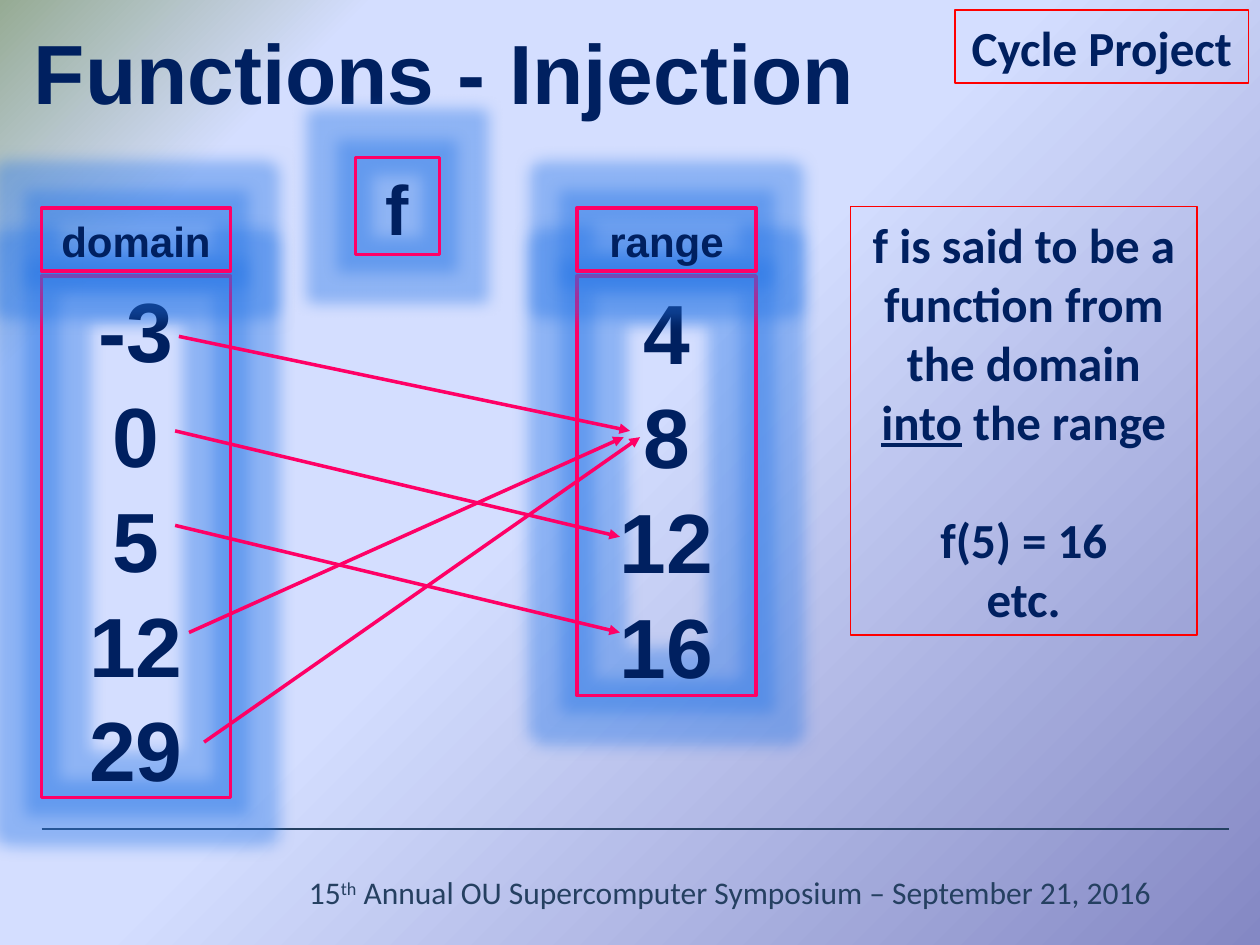
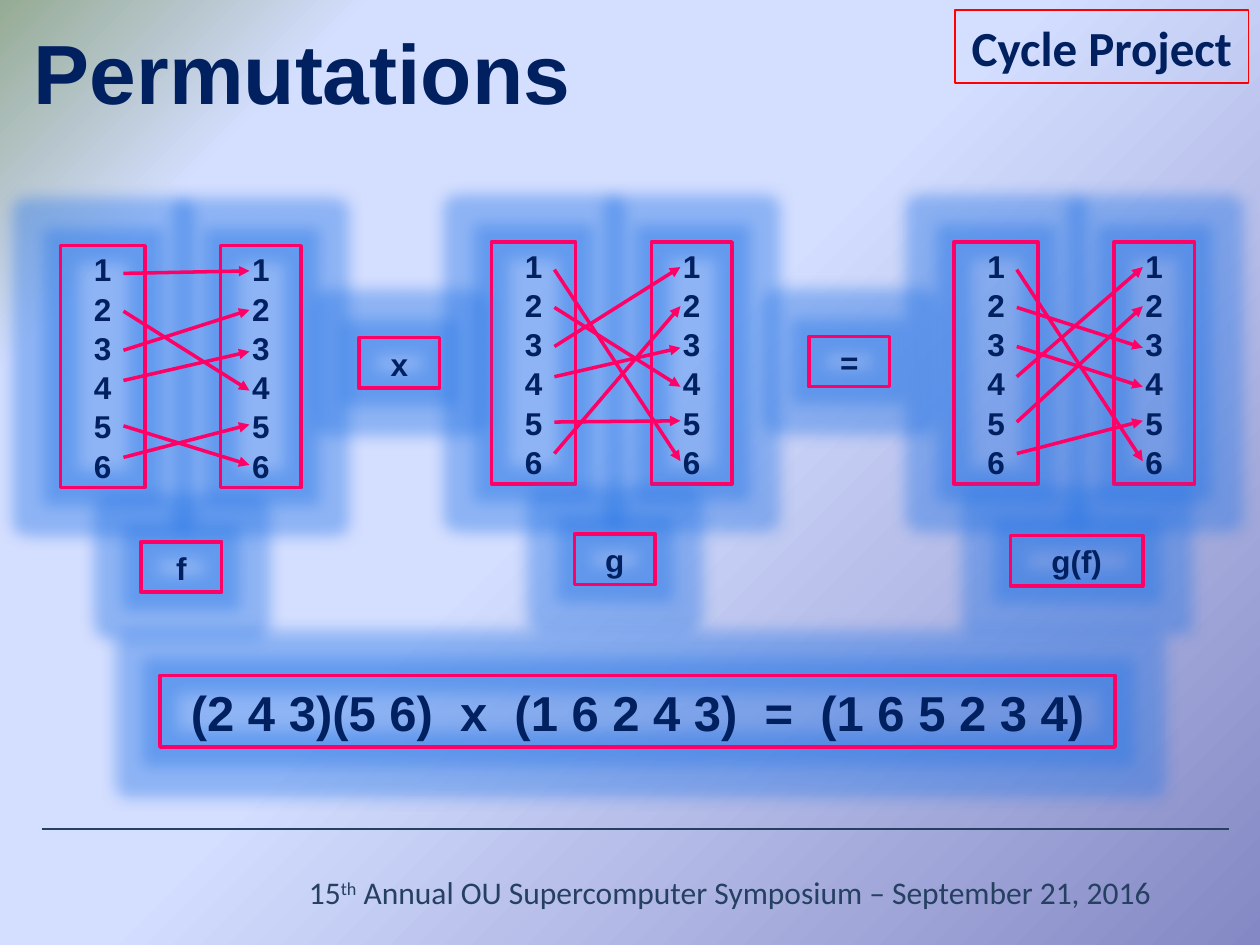
"""Build two slides on functions and permutations with mapping diagrams."""
from lxml.etree import SubElement
from pptx import Presentation
from pptx.dml.color import RGBColor
from pptx.enum.shapes import MSO_CONNECTOR, MSO_SHAPE
from pptx.enum.text import MSO_ANCHOR, PP_ALIGN
from pptx.oxml import parse_xml
from pptx.oxml.ns import nsdecls, qn
from pptx.util import Inches, Pt

NAVY = RGBColor(0x00, 0x20, 0x60)
SLATE = RGBColor(0x25, 0x40, 0x61)
PINK = RGBColor(0xFF, 0x00, 0x66)
RED = RGBColor(0xFF, 0x00, 0x00)
GLOW = RGBColor(0x25, 0x75, 0xE6)
BACKGROUND = [(0, "8488C4"), (53, "D4DEFF"), (83, "D4DEFF"), (100, "96AB94")]

PROJECT = "Cycle Project"
FOOTER = [("15", False), ("th", True),
          (" Annual OU Supercomputer Symposium – September 21, 2016", False)]

INJECTION_BOXES = [
    (["-3", "0", "5", "12", "29"], (0.33, 2.19, 1.5, 4.14), 48),
    (["4", "8", "12", "16"], (4.58, 2.19, 1.42, 3.33), 48),
    (["domain"], (0.33, 1.65, 1.5, 0.5), 24),
    (["range"], (4.58, 1.65, 1.42, 0.5), 24),
    (["f"], (2.82, 1.25, 0.67, 0.77), 40),
]
INJECTION_ARROWS = [
    (1.42, 2.67, 5, 3.42), (1.39, 3.42, 4.92, 4.26), (1.39, 4.17, 4.92, 5.02),
    (1.5, 5.02, 4.95, 3.47), (1.62, 5.89, 5.08, 3.47),
]
NOTE_LINES = [
    [("f is said to be a function from the domain ", False), ("into", True),
     (" the range", False)],
    [("f(5) = 16", False)],
    [("etc.", False)],
]

PERMUTATIONS = [
    (0.48, 1.95, [1, 4, 2, 3, 6, 5]),
    (3.9, 1.92, [6, 4, 1, 3, 5, 2]),
    (7.57, 1.92, [6, 3, 4, 1, 2, 5]),
]
ROW_STARTS = [0.22, 0.52, 0.83, 1.07, 1.43, 1.68]
ROW_ENDS = [0.2, 0.51, 0.84, 1.15, 1.42, 1.74]
PERMUTATION_LABELS = [
    (["f"], (1.12, 4.3, 0.64, 0.4), 18),
    (["g"], (4.56, 4.24, 0.64, 0.4), 18),
    (["x"], (2.85, 2.68, 0.64, 0.4), 18),
    (["="], (6.42, 2.67, 0.64, 0.4), 18),
    (["g(f)"], (8.02, 4.25, 1.05, 0.4), 18),
    (["(2 4 3)(5 6)  x  (1 6 2 4 3)  =  (1 6 5 2 3 4)"],
     (1.27, 5.36, 7.58, 0.57), 28),
]


def style(p, size, name, color=NAVY, bold=True, align=PP_ALIGN.CENTER):
    p.alignment = align
    p.font.size, p.font.name, p.font.bold = Pt(size), name, bold
    p.font.color.rgb = color


def add_frame(slide, at, color, width):
    sp = slide.shapes.add_shape(MSO_SHAPE.RECTANGLE, *map(Inches, at))
    sp.shadow.inherit = False
    sp.fill.background()
    sp.line.color.rgb = color
    sp.line.width = Pt(width)
    sp.text_frame.word_wrap = True
    sp.text_frame.vertical_anchor = MSO_ANCHOR.MIDDLE
    return sp


def add_glow_box(slide, lines, at, size):
    sp = add_frame(slide, at, PINK, 2)
    effects = sp._element.spPr.find(qn("a:effectLst"))
    glow = SubElement(effects, qn("a:glow"), rad=str(Pt(18)))
    tint = SubElement(glow, qn("a:srgbClr"), val=str(GLOW))
    SubElement(tint, qn("a:alpha"), val="40000")
    tf = sp.text_frame
    for i, line in enumerate(lines):
        p = tf.add_paragraph() if i else tf.paragraphs[0]
        p.text = line
        p.line_spacing = 1.04
        style(p, size, "Arial")


def add_line(slide, ends, color, width, arrow=False):
    line = slide.shapes.add_connector(MSO_CONNECTOR.STRAIGHT, *map(Inches, ends))
    line.line.color.rgb = color
    line.line.width = Pt(width)
    if arrow:
        SubElement(line.line._get_or_add_ln(), qn("a:tailEnd"), type="triangle")
    SubElement(line._element.spPr, qn("a:effectLst"))


def add_text(slide, at):
    tf = slide.shapes.add_textbox(*map(Inches, at)).text_frame
    tf.word_wrap = True
    return tf.paragraphs[0]


def set_background(slide):
    stops = "".join(f'<a:gs pos="{pos * 1000}"><a:srgbClr val="{color}"/></a:gs>'
                    for pos, color in BACKGROUND)
    slide._element.cSld.insert(0, parse_xml(
        f'<p:bg {nsdecls("p", "a")}><p:bgPr><a:gradFill rotWithShape="1">'
        f'<a:gsLst>{stops}</a:gsLst><a:path path="circle">'
        '<a:fillToRect l="100000" t="100000"/></a:path></a:gradFill>'
        '<a:effectLst/></p:bgPr></p:bg>'))


def add_slide(prs, title):
    slide = prs.slides.add_slide(prs.slide_layouts[6])
    set_background(slide)
    add_line(slide, (0.33, 6.58, 9.75, 6.58), SLATE, 1.25)
    p = add_text(slide, (2.17, 6.88, 7.25, 0.67))
    for text, raised in FOOTER:
        r = p.add_run()
        r.text = text
        if raised:
            r._r.get_or_add_rPr().set("baseline", "30000")
    style(p, 18, "Calibri", SLATE, bold=False)
    p = add_frame(slide, (7.58, 0.08, 2.33, 0.58), RED, 0.75).text_frame.paragraphs[0]
    p.text = PROJECT
    style(p, 28, "Calibri")
    p = add_text(slide, (0.17, 0.08, 7.42, 0.91))
    p.text = title
    p.line_spacing = 1.04
    style(p, 48, "Arial", align=PP_ALIGN.LEFT)
    return slide


def add_note(slide):
    tf = add_frame(slide, (6.75, 1.64, 2.75, 3.4), RED, 0.75).text_frame
    for i, runs in enumerate(NOTE_LINES):
        p = tf.add_paragraph() if i else tf.paragraphs[0]
        for text, underlined in runs:
            r = p.add_run()
            r.text = text
            if underlined:
                r.font.underline = True
        if i == 1:
            p.space_before = Pt(34)
        style(p, 28, "Calibri")


def add_permutation(slide, left, top, images):
    numbers = [str(n) for n in range(1, len(images) + 1)]
    add_glow_box(slide, numbers, (left, top, 0.67, 1.92), 18)
    add_glow_box(slide, numbers, (left + 1.27, top, 0.64, 1.92), 18)
    for start, image in zip(ROW_STARTS, images):
        ends = (left + 0.5, top + start, left + 1.5, top + ROW_ENDS[image - 1])
        add_line(slide, ends, PINK, 2, arrow=True)


def main():
    prs = Presentation()
    prs.slide_width, prs.slide_height = Inches(10), Inches(7.5)

    injection = add_slide(prs, "Functions - Injection")
    for box in INJECTION_BOXES:
        add_glow_box(injection, *box)
    for ends in INJECTION_ARROWS:
        add_line(injection, ends, PINK, 2, arrow=True)
    add_note(injection)

    permutations = add_slide(prs, "Permutations")
    for permutation in PERMUTATIONS:
        add_permutation(permutations, *permutation)
    for label in PERMUTATION_LABELS:
        add_glow_box(permutations, *label)

    prs.save("out.pptx")


if __name__ == "__main__":
    main()
